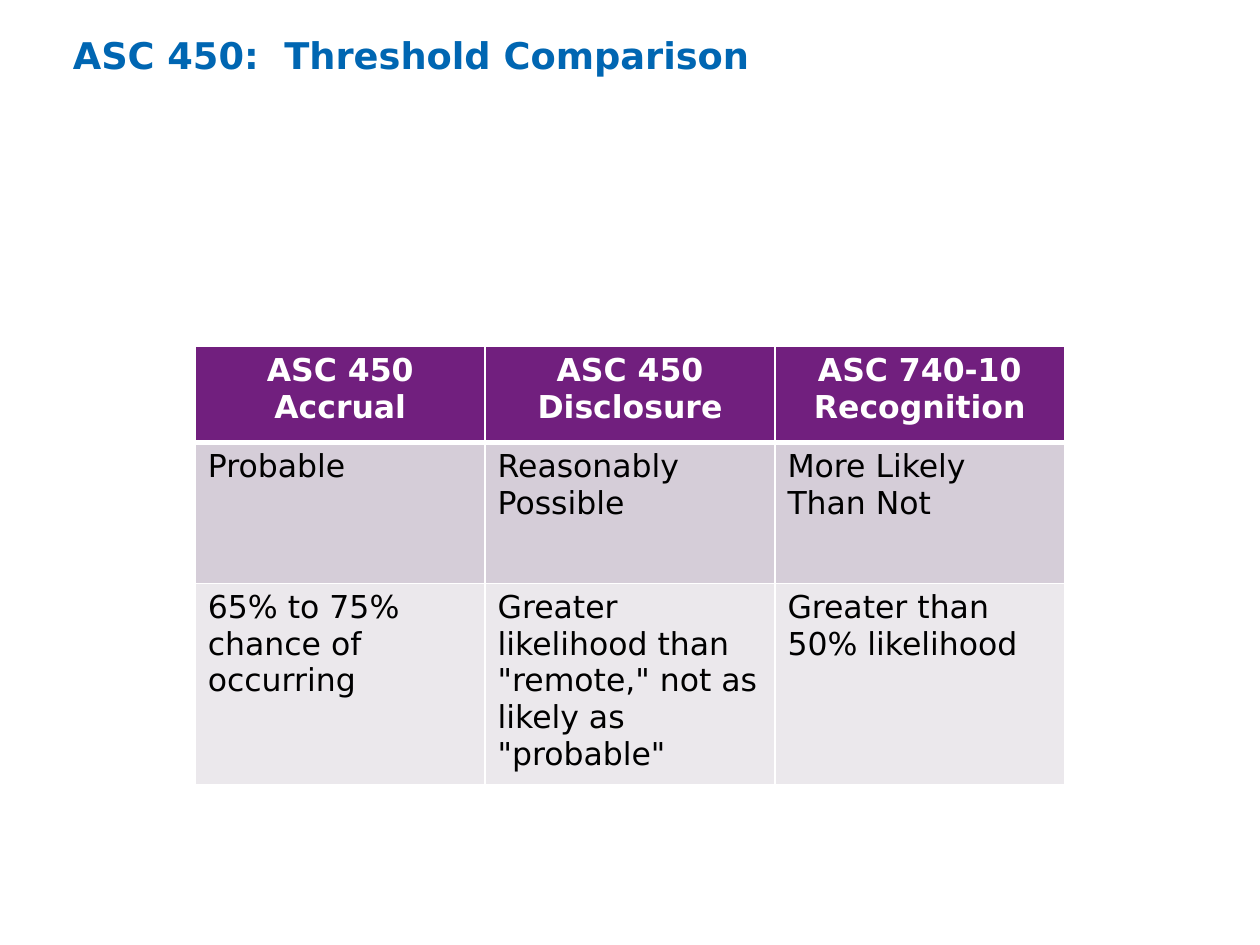
"""Build the ASC 450 threshold comparison slide."""
from lxml.etree import SubElement
from pptx import Presentation
from pptx.dml.color import RGBColor
from pptx.enum.text import MSO_ANCHOR, PP_ALIGN
from pptx.oxml.ns import qn
from pptx.util import Inches, Pt

BLUE = RGBColor(0x00, 0x66, 0xB2)
PURPLE = RGBColor(0x71, 0x1F, 0x7E)
MAUVE = RGBColor(0xD5, 0xCD, 0xD8)
PALE = RGBColor(0xEB, 0xE8, 0xEC)
WHITE = RGBColor(0xFF, 0xFF, 0xFF)
BLACK = RGBColor(0x00, 0x00, 0x00)
FONT = "DejaVu Sans"

ROWS = [
    (0.76, PURPLE, WHITE, True, PP_ALIGN.CENTER,
     ["ASC 450 Accrual", "ASC 450 Disclosure", "ASC 740-10 Recognition"]),
    (1.12, MAUVE, BLACK, False, PP_ALIGN.LEFT,
     ["Probable", "Reasonably Possible", "More Likely Than Not"]),
    (1.41, PALE, BLACK, False, PP_ALIGN.LEFT,
     ["65% to 75% chance of occurring",
      'Greater likelihood than "remote," not as likely as "probable"',
      "Greater than 50% likelihood"]),
]


def write(p, text, color, **fmt):
    r = p.add_run()
    r.text = text
    r.font.color.rgb = color
    for name, value in {"name": FONT, **fmt}.items():
        setattr(r.font, name, value)


def add_border(cell, side, width):
    ln = SubElement(cell._tc.get_or_add_tcPr(), qn(f"a:ln{side}"), w=str(Pt(width)))
    fill = SubElement(ln, qn("a:solidFill"))
    SubElement(fill, qn("a:srgbClr"), val=str(WHITE))


prs = Presentation()
prs.slide_width, prs.slide_height = Inches(10), Inches(7.5)
s = prs.slides.add_slide(prs.slide_layouts[6])

sp = s.shapes.add_textbox(Inches(0.48), Inches(0.28), Inches(9.05), Inches(0.36))
tf = sp.text_frame
for name, value in {"word_wrap": True, "vertical_anchor": MSO_ANCHOR.MIDDLE,
                    "margin_top": 0, "margin_bottom": 0}.items():
    setattr(tf, name, value)
p = tf.paragraphs[0]
p.line_spacing = 0.9
write(p, "ASC 450:  Threshold Comparison", BLUE, size=Pt(21), bold=True)

col_width = Inches(2.3)
height = Inches(sum(row[0] for row in ROWS))
table = s.shapes.add_table(len(ROWS), 3, Inches(1.55), Inches(2.75),
                           3 * col_width, height).table
table.horz_banding = False
for col in table.columns:
    col.width = col_width

for i, (row_height, fill, color, bold, align, texts) in enumerate(ROWS):
    table.rows[i].height = Inches(row_height)
    for j, text in enumerate(texts):
        cell = table.cell(i, j)
        widths = {"L": 1, "R": 1, "T": 3 if i == 1 else 1, "B": 3 if i == 0 else 1}
        for side, width in widths.items():
            add_border(cell, side, width)
        cell.fill.solid()
        cell.fill.fore_color.rgb = fill
        p = cell.text_frame.paragraphs[0]
        p.alignment = align
        write(p, text, color, size=Pt(18), bold=bold)

prs.save("out.pptx")
